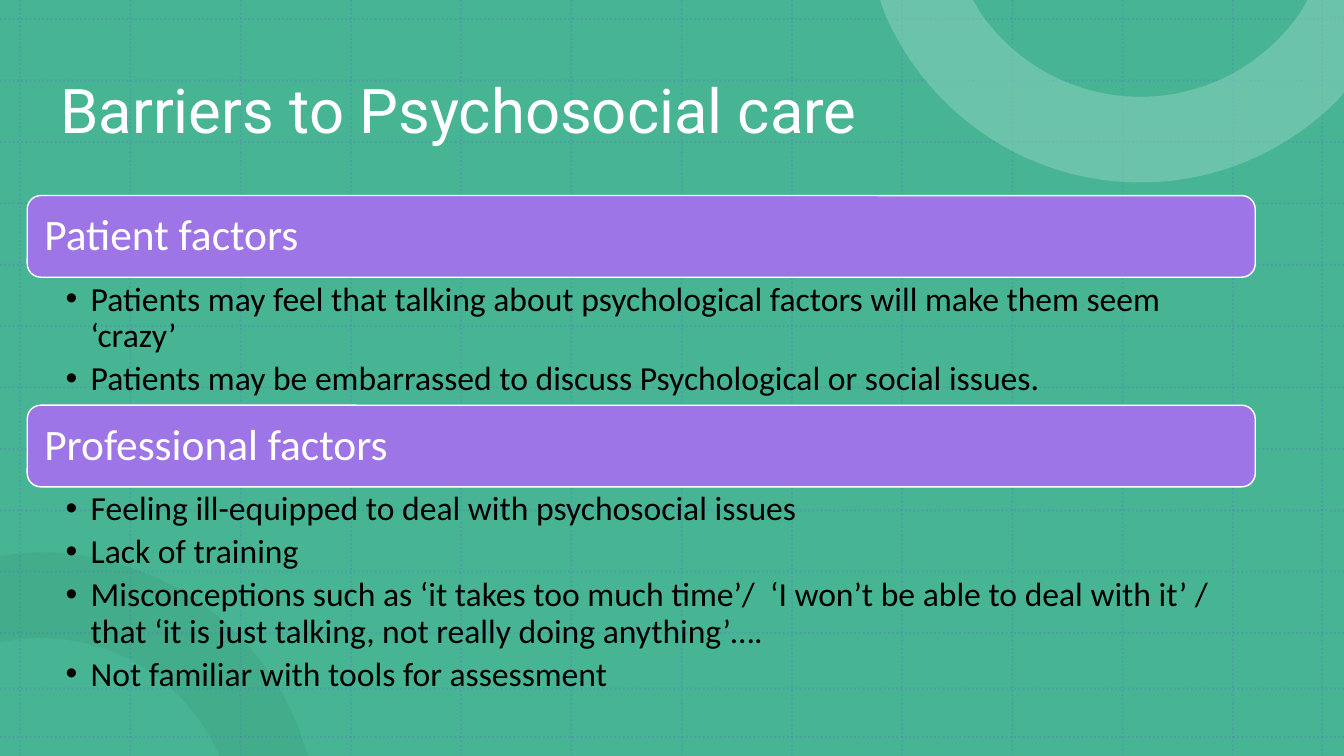
from lxml import etree
from pptx import Presentation
from pptx.dml.color import RGBColor
from pptx.enum.dml import MSO_LINE
from pptx.enum.shapes import MSO_CONNECTOR, MSO_SHAPE
from pptx.enum.text import MSO_ANCHOR, PP_ALIGN
from pptx.oxml.ns import qn
from pptx.util import Pt

SCALE = 9144  # EMU in one px, 100 px to the inch
WIDE, HIGH = 1333, 750
STRAIGHT = MSO_CONNECTOR.STRAIGHT
RECT, ROUND = MSO_SHAPE.RECTANGLE, MSO_SHAPE.ROUNDED_RECTANGLE
DOTS = MSO_LINE.ROUND_DOT
LEFT = PP_ALIGN.LEFT
TOP, MIDDLE = MSO_ANCHOR.TOP, MSO_ANCHOR.MIDDLE

COLORS = {
    "back": "47B593",
    "grid": "565FE2",
    "dark": "35886E",
    "pale": "90D3BF",
    "bar": "9E75E7",
    "white": "FFFFFF",
    "black": "000000",
}

# Outlines: one point is a straight step, three points are a curve
LOW_RING = [
    [(40, 548)],
    [(164, 548), (269, 630), (303, 742)],
    [(306, 750)], [(217, 750)], [(217, 749)],
    [(188, 681), (120, 633), (40, 633)],
    [(27, 633), (14, 634), (2, 637)],
    [(-1, 637)], [(-1, 552)], [(12, 550)],
    [(21, 549), (31, 548), (40, 548)],
]
TOP_RING = [
    [(873, 0)], [(965, 0)], [(972, 12)],
    [(1007, 63), (1065, 96), (1131, 96)],
    [(1197, 96), (1255, 63), (1290, 12)],
    [(1297, 0)], [(1333, 0)], [(1333, 92)], [(1326, 100)],
    [(1276, 150), (1207, 181), (1131, 181)],
    [(1017, 181), (919, 111), (877, 12)],
]

GROUPS = [
    (194, 126, "Patient factors", [
        "Patients may feel that talking about psychological factors will make them seem ‘crazy’",
        "Patients may be embarrassed to discuss Psychological or social issues.",
    ]),
    (402, 218, "Professional factors", [
        "Feeling ill-equipped to deal with psychosocial issues",
        "Lack of training",
        "Misconceptions such as ‘it takes too much time’/  ‘I won’t be able to deal with it’ / "
        "that ‘it is just talking, not really doing anything’….",
        "Not familiar with tools for assessment",
    ]),
]


def px(*sizes):
    return [round(size * SCALE) for size in sizes]


def paint(part, name, alpha=100):
    """Give a fill a solid colour, with alpha in percent."""
    part.solid()
    part.fore_color.rgb = RGBColor.from_string(COLORS[name])
    if alpha < 100:
        color = part.fore_color._xFill[0]
        etree.SubElement(color, qn("a:alpha"), val=str(alpha * 1000))


def write(slide, box, lines, size, font, color, pads, anchor=MIDDLE, after=0, indent=0):
    """Add a text box with paragraphs; an indent makes them bullets."""
    frame = slide.shapes.add_textbox(*px(*box)).text_frame
    frame.word_wrap = True
    frame.vertical_anchor = anchor
    (frame.margin_left, frame.margin_top,
     frame.margin_right, frame.margin_bottom) = px(*pads)
    for i, line in enumerate(lines):
        para = frame.add_paragraph() if i else frame.paragraphs[0]
        para.alignment = LEFT
        para.line_spacing = 0.9
        para.space_after = Pt(after)
        run = para.add_run()
        run.text = line
        run.font.size = Pt(size)
        run.font.name = font
        run.font.color.rgb = RGBColor.from_string(COLORS[color])
        if indent:
            props = para._p.get_or_add_pPr()
            step = px(indent)[0]
            props.set("marL", str(step))
            props.set("indent", str(-step))
            etree.SubElement(props, qn("a:buFont"), typeface="Arial")
            etree.SubElement(props, qn("a:buChar"), char="•")


def draw_rule(slide, *ends):
    rule = slide.shapes.add_connector(STRAIGHT, *px(*ends))
    paint(rule.line.fill, "grid", 20)
    rule.line.width = Pt(1.5)
    rule.line.dash_style = DOTS
    etree.SubElement(rule._element.spPr, qn("a:effectLst"))


def draw_grid(slide, wide, high):
    for x in [20 + 109.35 * i for i in range(12)] + [1311]:
        draw_rule(slide, x, 0, x, high)
    for y in [19 + 60.9 * i for i in range(11)] + [683, 731]:
        draw_rule(slide, 0, y, wide, y)


def draw_ring(slide, steps, color, alpha):
    """Draw a closed outline, joining each three-point step into a curve."""
    (start,), *rest = steps
    path = slide.shapes.build_freeform(*px(*start))
    path.add_line_segments([px(*point) for step in rest for point in step])
    ring = path.convert_to_shape()
    lines = iter(list(ring._element.iter(qn("a:lnTo"))))
    for step in rest:
        first, *more = [next(lines) for _ in step]
        if more:
            first.tag = qn("a:cubicBezTo")
            for line in more:
                first.append(line[0])
                line.getparent().remove(line)
    ring.shadow.inherit = False
    ring.line.fill.background()
    paint(ring.fill, color, alpha)


def draw_back(slide, wide, high):
    back = slide.shapes.add_shape(RECT, *px(0, 0, wide, high))
    back.shadow.inherit = False
    back.line.fill.background()
    paint(back.fill, "back")
    draw_grid(slide, wide, high)
    draw_ring(slide, LOW_RING, "dark", 20)
    draw_ring(slide, TOP_RING, "pale", 50)


def draw_group(slide, x, y, wide, high, head, points):
    """A heading bar with its bullets, high px of them, below."""
    tall, edge = 81, 4
    bar = slide.shapes.add_shape(ROUND, *px(x, y, wide, tall))
    bar.shadow.inherit = False
    paint(bar.fill, "bar")
    paint(bar.line.fill, "white")
    bar.line.width = Pt(1)
    label = (x + edge, y + edge, wide - 2 * edge, tall - 2 * edge)
    write(slide, label, [head], 31, "Calibri", "white", (13, 13, 13, 13))
    body = (x, y + tall + 1, wide, high)
    write(slide, body, points, 24, "Calibri", "black", (38, 4, 24, 4), TOP, 4.8, 25)


def main():
    deck = Presentation()
    deck.slide_width, deck.slide_height = px(WIDE, HIGH)
    slide = deck.slides.add_slide(deck.slide_layouts[6])
    draw_back(slide, WIDE, HIGH)
    write(slide, (50, 40, 1173, 145), ["Barriers to Psychosocial care"],
          44, "Roboto", "white", (10, 5, 10, 5))
    for y, high, head, points in GROUPS:
        draw_group(slide, 27, y, 1218, high, head, points)
    deck.save("out.pptx")


if __name__ == "__main__":
    main()
